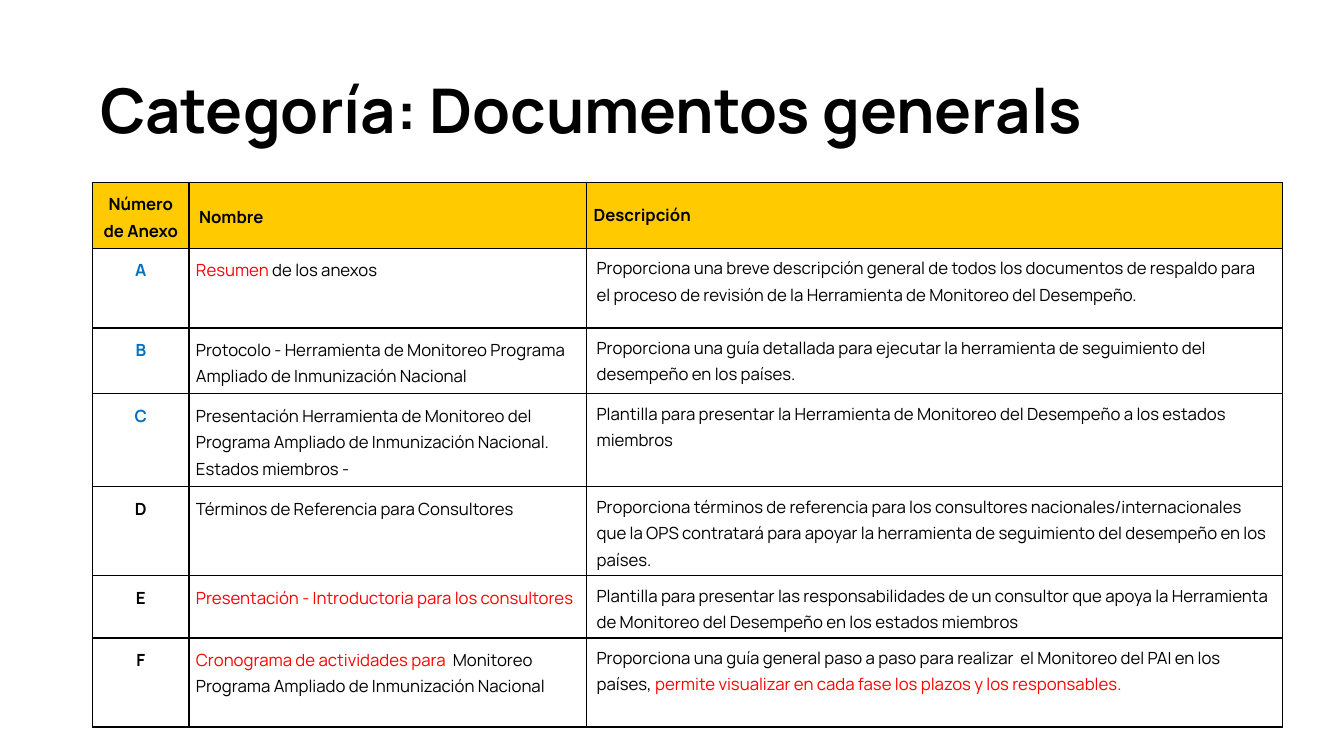
"""Build a slide listing the annexes of the general documents category."""
from dataclasses import dataclass

from lxml.etree import SubElement
from pptx import Presentation
from pptx.dml.color import RGBColor
from pptx.enum.text import MSO_ANCHOR, PP_ALIGN
from pptx.oxml.ns import qn
from pptx.util import Pt


@dataclass(frozen=True)
class Theme:
    """Colours, font and type sizes of the slide."""
    font: str = "Manrope"
    title_size: int = 44
    table_size: int = 12
    border_width: int = 1
    black: str = "000000"
    red: str = "FF0000"
    blue: str = "0070C0"
    yellow: str = "FFCB00"


THEME = Theme()


@dataclass(frozen=True)
class Span:
    """Text of one colour."""
    text: str
    color: str = THEME.black


@dataclass(frozen=True)
class Style:
    """Layout of the text in a cell or box, in points."""
    side: float
    edge: float
    anchor: MSO_ANCHOR = MSO_ANCHOR.TOP
    align: PP_ALIGN = PP_ALIGN.LEFT
    spacing: float = 1.15
    bold: bool = False
    size: int = THEME.table_size


@dataclass(frozen=True)
class Annex:
    """One row of the table, with its height in points."""
    height: float
    letter: Span
    name: tuple[Span, ...]
    description: tuple[Span, ...]


MIDDLE = MSO_ANCHOR.MIDDLE
TITLE_STYLE = Style(5.25, 2.6, MIDDLE, spacing=0.9, bold=True, size=THEME.title_size)
HEADER_STYLES = (
    Style(5, 5, MIDDLE, PP_ALIGN.CENTER, bold=True),
    Style(7.2, 3.6, MIDDLE, bold=True),
    Style(5, 5, MIDDLE, spacing=1.0, bold=True),
)
BODY_STYLES = (
    Style(5, 5, align=PP_ALIGN.CENTER, bold=True),
    Style(5, 5),
    Style(7.2, 3.6),
)
HEADERS = ("Número de Anexo", "Nombre", "Descripción")
HEADER_HEIGHT = 47
COLUMN_WIDTHS = (68.8, 284, 497.4)
TABLE_LEFT, TABLE_TOP = 66.2, 130.3

ANNEXES = (
    Annex(57, Span("A", THEME.blue),
          (Span("Resumen", THEME.red), Span(" de los anexos")),
          (Span("Proporciona una breve descripción general de todos los documentos de "
                "respaldo para el proceso de revisión de la Herramienta de Monitoreo "
                "del Desempeño."),)),
    Annex(47, Span("B", THEME.blue),
          (Span("Protocolo - Herramienta de Monitoreo Programa Ampliado de "
                "Inmunización Nacional"),),
          (Span("Proporciona una guía detallada para ejecutar la herramienta de "
                "seguimiento del desempeño en los países."),)),
    Annex(66.5, Span("C", THEME.blue),
          (Span("Presentación Herramienta de Monitoreo del Programa Ampliado de "
                "Inmunización Nacional. Estados miembros -"),),
          (Span("Plantilla para presentar la Herramienta de Monitoreo del Desempeño "
                "a los estados miembros"),)),
    Annex(63.5, Span("D"),
          (Span("Términos de Referencia para Consultores"),),
          (Span("Proporciona términos de referencia para los consultores "
                "nacionales/internacionales que la OPS contratará para apoyar la "
                "herramienta de seguimiento del desempeño en los países."),)),
    Annex(44.5, Span("E"),
          (Span("Presentación - Introductoria para los consultores", THEME.red),),
          (Span("Plantilla para presentar las responsabilidades de un consultor que "
                "apoya la Herramienta de Monitoreo del Desempeño en los estados "
                "miembros"),)),
    Annex(63.5, Span("F"),
          (Span("Cronograma de actividades para  ", THEME.red),
           Span("Monitoreo Programa Ampliado de Inmunización Nacional")),
          (Span("Proporciona una guía general paso a paso para realizar  el Monitoreo "
                "del PAI en los países, "),
           Span("permite visualizar en cada fase los plazos y los responsables.",
                THEME.red))),
)


def apply_format(target, values: dict) -> None:
    """Set each named attribute on the target."""
    for name, value in values.items():
        setattr(target, name, value)


def write_text(holder, spans: tuple[Span, ...], style: Style) -> None:
    """Fill the first paragraph of a cell or text frame."""
    apply_format(holder, {
        "margin_left": Pt(style.side), "margin_right": Pt(style.side),
        "margin_top": Pt(style.edge), "margin_bottom": Pt(style.edge),
        "vertical_anchor": style.anchor, "word_wrap": True,
    })
    frame = getattr(holder, "text_frame", holder)
    para = frame.paragraphs[0]
    apply_format(para, {"alignment": style.align, "line_spacing": style.spacing})
    for span in spans:
        run = para.add_run()
        run.text = span.text
        apply_format(run.font, {"name": THEME.font, "size": Pt(style.size),
                                "bold": style.bold})
        run.font.color.rgb = RGBColor.from_string(span.color)


def draw_borders(cell) -> None:
    """Draw a line on all four sides of a cell."""
    properties = cell._tc.get_or_add_tcPr()
    for side in ("a:lnL", "a:lnR", "a:lnT", "a:lnB"):
        line = SubElement(properties, qn(side), w=str(Pt(THEME.border_width)))
        fill = SubElement(line, qn("a:solidFill"))
        SubElement(fill, qn("a:srgbClr"), val=THEME.black)


def add_title(page, text: str) -> None:
    """Add the slide heading."""
    box = page.shapes.add_textbox(Pt(66.2), Pt(28.8), Pt(864.7), Pt(104.4))
    write_text(box.text_frame, (Span(text),), TITLE_STYLE)


def add_annex_table(page, annexes: tuple[Annex, ...]) -> None:
    """Add the bordered table with a header and one row per annex."""
    heights = [HEADER_HEIGHT, *(annex.height for annex in annexes)]
    rows = [tuple((Span(header),) for header in HEADERS)]
    rows += [((annex.letter,), annex.name, annex.description) for annex in annexes]
    table = page.shapes.add_table(
        len(rows), len(HEADERS), Pt(TABLE_LEFT), Pt(TABLE_TOP),
        Pt(sum(COLUMN_WIDTHS)), Pt(sum(heights))).table
    apply_format(table, {"first_row": False, "horz_banding": False})
    for column, width in zip(table.columns, COLUMN_WIDTHS):
        column.width = Pt(width)
    for index, (height, contents) in enumerate(zip(heights, rows)):
        table.rows[index].height = Pt(height)
        styles = BODY_STYLES if index else HEADER_STYLES
        for cell, spans, style in zip(table.rows[index].cells, contents, styles):
            write_text(cell, spans, style)
            draw_borders(cell)
            if index:
                cell.fill.background()
            else:
                cell.fill.solid()
                cell.fill.fore_color.rgb = RGBColor.from_string(THEME.yellow)


def main() -> None:
    """Build and save the deck."""
    deck = Presentation()
    apply_format(deck, {"slide_width": Pt(960), "slide_height": Pt(540)})
    page = deck.slides.add_slide(deck.slide_layouts[6])
    add_title(page, "Categoría: Documentos generals")
    add_annex_table(page, ANNEXES)
    deck.save("out.pptx")


if __name__ == "__main__":
    main()
